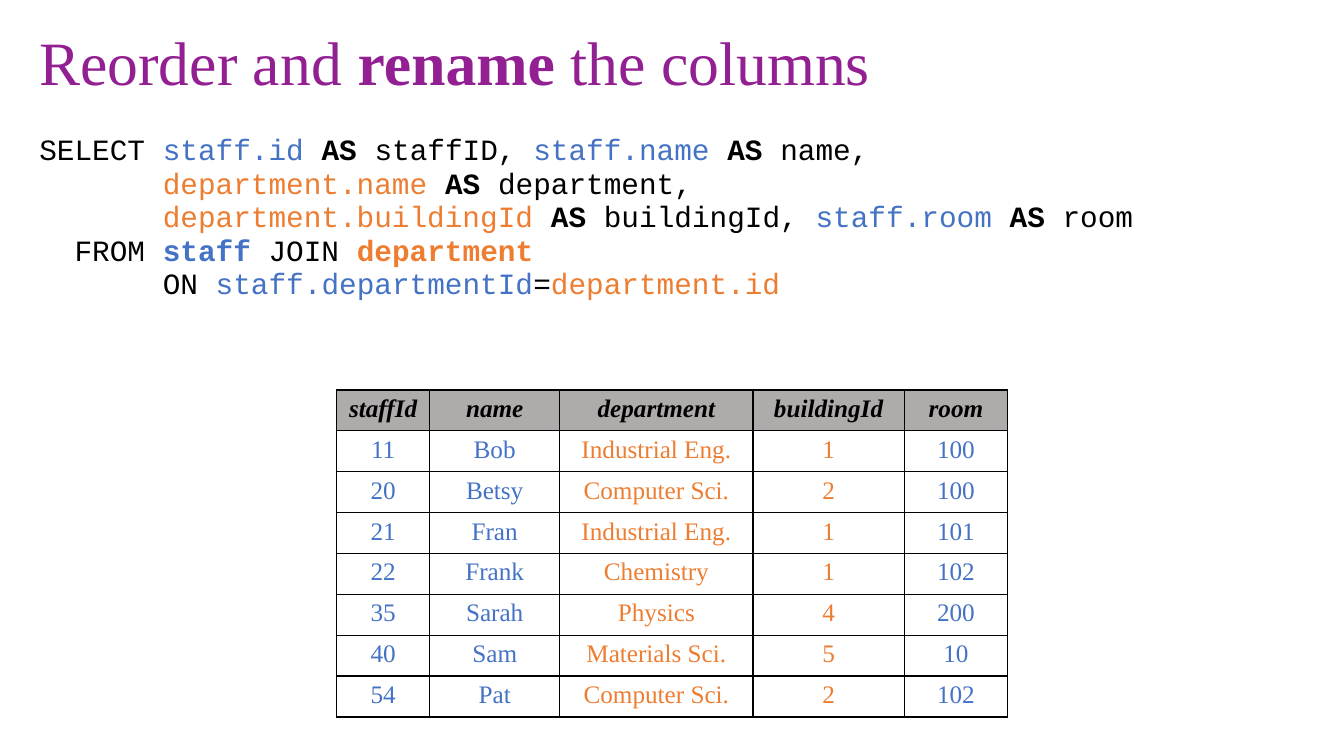
from pptx import Presentation
from pptx.dml.color import RGBColor as Rgb
from pptx.enum.text import MSO_ANCHOR as Anchor, PP_ALIGN as Align
from pptx.oxml.xmlchemy import OxmlElement as Node
from pptx.util import Pt

HUES = {
    "title": "932092",
    "black": "000000",
    "staff": "4472C4",
    "dept": "ED7D31",
    "head": "AFABAB",
}
SERIF = "Times New Roman"
MONO = "Courier New"
STEP = 12.6


def write(para, text, hue="black", size=18, font=SERIF, bold=False, ital=False):
    run = para.add_run()
    run.text = text
    run.font.name = font
    run.font.size = Pt(size)
    run.font.bold = bold
    run.font.italic = ital
    run.font.color.rgb = Rgb.from_string(HUES[hue])


class Page:
    def __init__(self, slide, line="black", width=1):
        self.slide = slide
        self.line = line
        self.width = width

    def text(self, box, lines, gap, top=3.6, anchor=Anchor.TOP, **style):
        frame = self.slide.shapes.add_textbox(*map(Pt, box)).text_frame
        frame.word_wrap = True
        frame.vertical_anchor = anchor
        frame.margin_top = Pt(top)
        for num, (indent, runs) in enumerate(lines):
            para = frame.add_paragraph() if num else frame.paragraphs[0]
            para.line_spacing = gap
            para._p.get_or_add_pPr().set("marL", str(Pt(indent)))
            for text, hue, bold in runs:
                write(para, text, hue, bold=bold, **style)

    def edge(self, cell):
        props = cell._tc.get_or_add_tcPr()
        for num, side in enumerate(("lnL", "lnR", "lnT", "lnB")):
            line = Node("a:" + side)
            line.set("w", str(Pt(self.width)))
            fill = Node("a:solidFill")
            hue = Node("a:srgbClr")
            hue.set("val", HUES[self.line])
            fill.append(hue)
            line.append(fill)
            props.insert(num, line)

    def table(self, left, top, widths, high, rows, hues):
        box = (left, top, sum(widths), high * len(rows))
        grid = self.slide.shapes.add_table(len(rows), len(widths), *map(Pt, box)).table
        grid.first_row = grid.horz_banding = False
        for col, width in zip(grid.columns, widths):
            col.width = Pt(width)
        for num, row in enumerate(rows):
            grid.rows[num].height = Pt(high)
            head = num == 0
            for pos, text in enumerate(row):
                cell = grid.cell(num, pos)
                if head:
                    cell.fill.solid()
                    cell.fill.fore_color.rgb = Rgb.from_string(HUES["head"])
                else:
                    cell.fill.background()
                self.edge(cell)
                para = cell.text_frame.paragraphs[0]
                para.alignment = Align.CENTER
                write(para, text, "black" if head else hues[pos], bold=head, ital=head)


TITLE = [(0, [
    ("Reorder and ", "title", False),
    ("rename", "title", True),
    (" the columns", "title", False),
])]

AS = ("AS ", "black", True)
QUERY = [
    (0, [
        ("SELECT ", "black", False),
        ("staff.id ", "staff", False), AS, ("staffID, ", "black", False),
        ("staff.name ", "staff", False), AS, ("name,", "black", False),
    ]),
    (7 * STEP, [
        ("department.name ", "dept", False), AS, ("department,", "black", False),
    ]),
    (7 * STEP, [
        ("department.buildingId ", "dept", False), AS, ("buildingId, ", "black", False),
        ("staff.room ", "staff", False), AS, ("room", "black", False),
    ]),
    (2 * STEP, [
        ("FROM ", "black", False), ("staff ", "staff", True),
        ("JOIN ", "black", False), ("department", "dept", True),
    ]),
    (7 * STEP, [
        ("ON ", "black", False), ("staff.departmentId", "staff", False),
        ("=", "black", False), ("department.id", "dept", False),
    ]),
]

ROWS = [
    ("staffId", "name", "department", "buildingId", "room"),
    ("11", "Bob", "Industrial Eng.", "1", "100"),
    ("20", "Betsy", "Computer Sci.", "2", "100"),
    ("21", "Fran", "Industrial Eng.", "1", "101"),
    ("22", "Frank", "Chemistry", "1", "102"),
    ("35", "Sarah", "Physics", "4", "200"),
    ("40", "Sam", "Materials Sci.", "5", "10"),
    ("54", "Pat", "Computer Sci.", "2", "102"),
]


def main():
    deck = Presentation()
    deck.slide_width, deck.slide_height = Pt(960), Pt(540)
    page = Page(deck.slides.add_slide(deck.slide_layouts[6]))
    page.text((21, 12, 916.5, 70), TITLE, 0.9, anchor=Anchor.MIDDLE, size=44)
    page.text((21, 90, 916.5, 440.5), QUERY, 0.95, top=5.6, size=21, font=MONO)
    page.table(240.5, 278.5, (66.4, 93, 138, 108, 74), 29.2, ROWS,
               ("staff", "staff", "dept", "dept", "staff"))
    deck.save("out.pptx")


if __name__ == "__main__":
    main()
